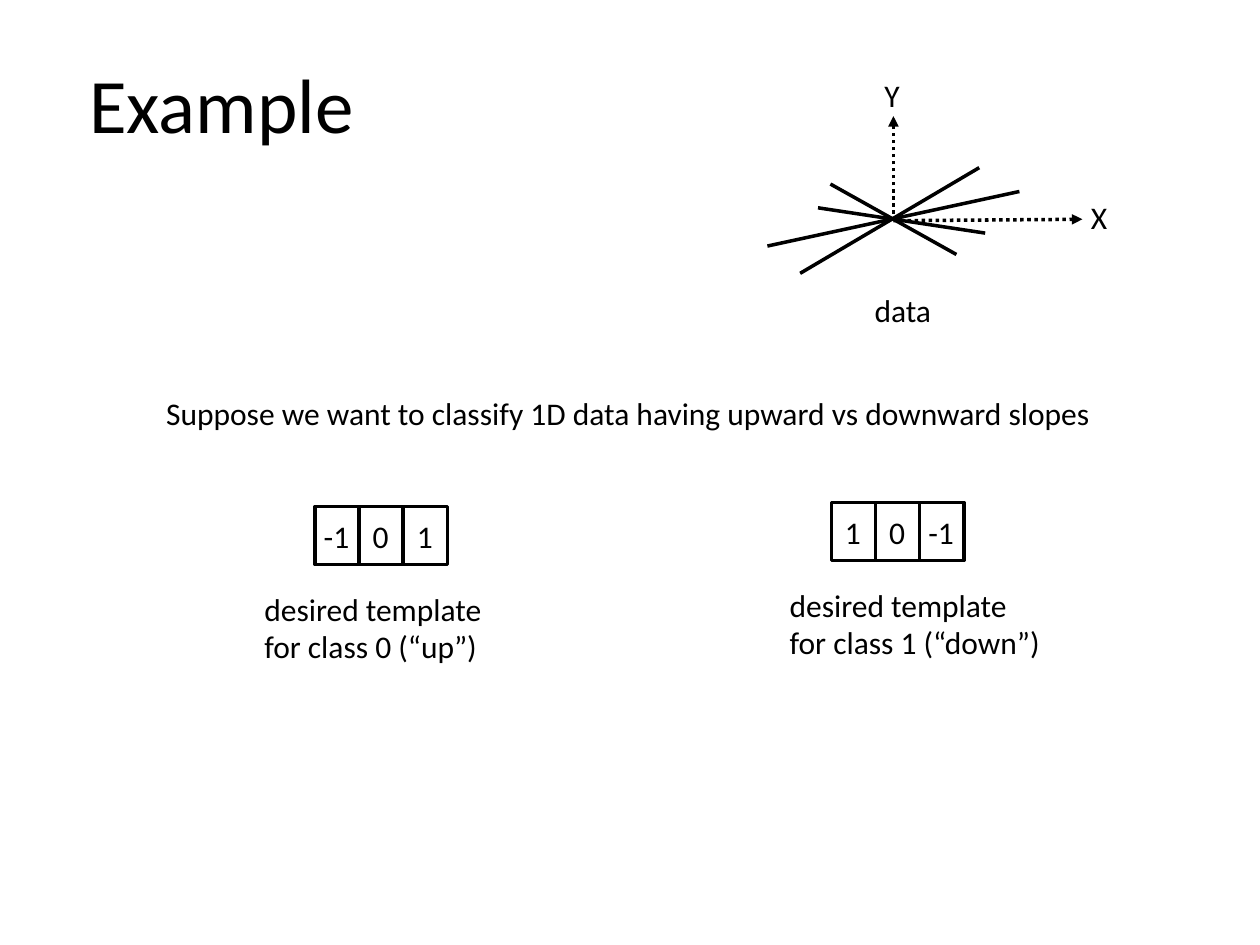
from pptx import Presentation
from pptx.dml.color import RGBColor
from pptx.enum.dml import MSO_LINE
from pptx.enum.shapes import MSO_CONNECTOR, MSO_SHAPE
from pptx.enum.text import MSO_AUTO_SIZE
from pptx.oxml.ns import qn
from pptx.util import Cm, Pt
from lxml.etree import SubElement

INK = "000000"
ROW = 1.02


def color(code):
    return RGBColor.from_string(code)


def write(shapes, words, x, y, w, h=ROW, size=18, wrap=False):
    box = shapes.add_textbox(Cm(x), Cm(y), Cm(w), Cm(h))
    frame = box.text_frame
    frame.word_wrap = wrap
    frame.auto_size = MSO_AUTO_SIZE.SHAPE_TO_FIT_TEXT
    run = frame.paragraphs[0].add_run()
    run.text = words
    run.font.name = "Calibri"
    run.font.size = Pt(size)
    run.font.color.rgb = color(INK)


def stroke(line):
    line.color.rgb = color(INK)
    line.width = Pt(2)


def link(shapes, x, y, start, end, arrow=False):
    line = shapes.add_connector(
        MSO_CONNECTOR.STRAIGHT,
        Cm(x + start[0]), Cm(y + start[1]), Cm(x + end[0]), Cm(y + end[1]))
    stroke(line.line)
    props = line._element.spPr
    if arrow:
        line.line.dash_style = MSO_LINE.ROUND_DOT
        SubElement(props.find(qn("a:ln")), qn("a:tailEnd"), type="triangle")
    SubElement(props, qn("a:effectLst"))


def plot(shapes, x, y):
    mid = (2.54, 3.05)
    for tip in ((2.54, 0.94), (6.35, 3.02)):
        link(shapes, x, y, mid, tip, True)
    write(shapes, "Y", x + 2.11, y, 0.84)
    write(shapes, "X", x + 6.27, y + 2.46, 0.84)
    slopes = (
        ((0.66, 4.11), (4.27, 1.98)),
        ((1.02, 2.79), (4.39, 3.3)),
        ((1.27, 2.31), (3.81, 3.73)),
        ((0, 3.56), (5.08, 2.46)),
    )
    for start, end in slopes:
        link(shapes, x, y, start, end)
    write(shapes, "data", x + 1.91, y + 4.34, 1.91, wrap=True)


def cell(shapes, value, x, y):
    wide, high = 0.89, 1.17
    group = shapes.add_group_shape().shapes
    rect = group.add_shape(MSO_SHAPE.RECTANGLE, Cm(x), Cm(y), Cm(wide), Cm(high))
    rect.shadow.inherit = False
    rect.fill.background()
    stroke(rect.line)
    room = 1.04 if len(value) > 1 else 0.84
    write(group, value, x + (wide - room) / 2, y + 0.08, room)


def template(shapes, x, y, w, inset, values, words):
    for index, value in enumerate(values):
        cell(shapes, value, x + inset + index * 0.89, y)
    write(shapes, words, x, y + 1.55, w, 1.8, wrap=True)


def main():
    deck = Presentation()
    deck.slide_width, deck.slide_height = Cm(25.4), Cm(19.05)
    shapes = deck.slides.add_slide(deck.slide_layouts[6]).shapes
    write(shapes, "Example", 1.55, 1.02, 5.89, 2.13, size=44)
    write(shapes, "Suppose we want to classify 1D data having upward vs downward slopes",
          3.1, 7.82, 19.48, wrap=True)
    plot(shapes, 15.47, 1.4)
    template(shapes, 5.08, 10.21, 5.51, 1.27, ("-1", "0", "1"),
             "desired template for class 0 (“up”)")
    template(shapes, 15.67, 10.13, 5.72, 1.09, ("1", "0", "-1"),
             "desired template for class 1 (“down”)")
    deck.save("out.pptx")


if __name__ == "__main__":
    main()
